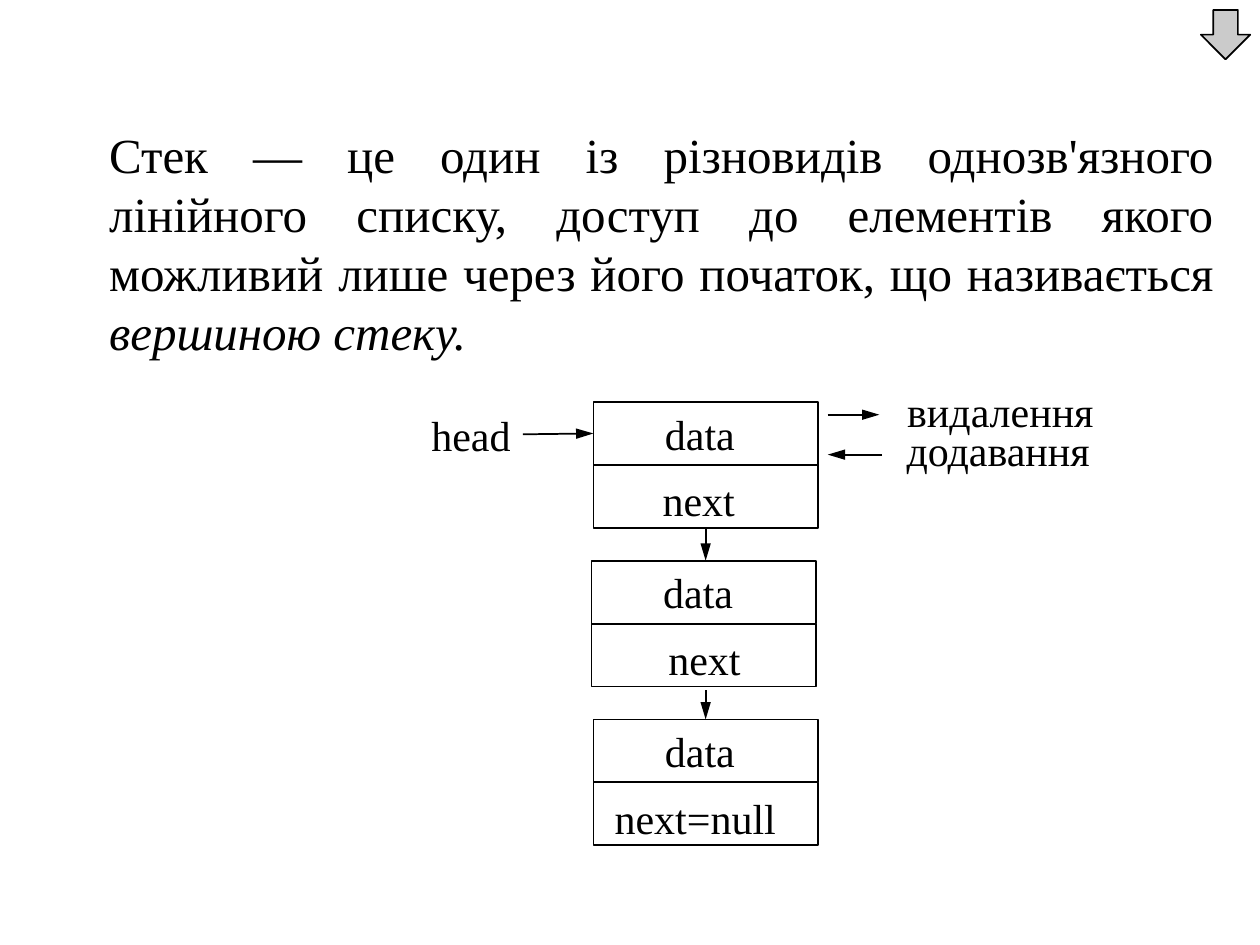
import pptx
import pptx.util
import pptx.dml.color
import pptx.enum.shapes
import pptx.enum.text
import pptx.oxml.ns
import lxml.etree

Pt = pptx.util.Pt
SHAPE = pptx.enum.shapes.MSO_SHAPE
ALIGN = pptx.enum.text.PP_ALIGN
INK = "000000"
FONT = "Times New Roman"
ROW = 36
STEP = 90.7


def color(code):
    return pptx.dml.color.RGBColor.from_string(code)


def apply(item, props):
    for name, value in props.items():
        setattr(item, name, value)


def add_sub(parent, tag, **attrs):
    return lxml.etree.SubElement(parent, pptx.oxml.ns.qn(tag), attrs)


def write(par, text, size, **props):
    run = par.add_run()
    run.text = text
    apply(run.font, {"name": FONT, "size": Pt(size), **props})
    run.font.color.rgb = color(INK)


def add_form(slide, kind, box, fill=None):
    form = slide.shapes.add_shape(kind, *map(Pt, box))
    form.shadow.inherit = False
    if fill:
        form.fill.solid()
        form.fill.fore_color.rgb = color(fill)
    else:
        form.fill.background()
    form.line.color.rgb = color(INK)
    form.line.width = Pt(1)


def add_label(slide, text, box, align=ALIGN.LEFT):
    frame = slide.shapes.add_textbox(*map(Pt, box)).text_frame
    apply(frame, {"word_wrap": False,
                  "auto_size": pptx.enum.text.MSO_AUTO_SIZE.SHAPE_TO_FIT_TEXT})
    frame.paragraphs[0].alignment = align
    write(frame.paragraphs[0], text, 24)


def add_arrow(slide, start, end):
    """Draw a line with its arrowhead at the end point."""
    line = slide.shapes.add_connector(
        pptx.enum.shapes.MSO_CONNECTOR.STRAIGHT, *map(Pt, (*start, *end)))
    line.line.color.rgb = color(INK)
    line.line.width = Pt(1)
    add_sub(line.line._get_or_add_ln(), "a:tailEnd",
            type="triangle", w="med", len="lg")
    add_sub(line._element.spPr, "a:effectLst")


def add_intro(slide, box):
    left, top, width, height = map(Pt, box)
    body = slide.placeholders[1]
    apply(body, {"left": left, "top": top, "width": width, "height": height})
    frame = body.text_frame
    apply(frame, {"margin_left": Pt(14.4), "margin_right": Pt(14.4),
                  "margin_top": Pt(3.6), "margin_bottom": Pt(3.6),
                  "word_wrap": True,
                  "auto_size": pptx.enum.text.MSO_AUTO_SIZE.NONE,
                  "vertical_anchor": pptx.enum.text.MSO_ANCHOR.TOP})
    par = frame.paragraphs[0]
    apply(par, {"alignment": ALIGN.JUSTIFY, "space_before": Pt(5.6)})
    props = par._p.get_or_add_pPr()
    props.set("marL", str(Pt(48)))
    props.set("indent", "0")
    add_sub(props, "a:buNone")
    write(par, "Стек — це один із різновидів однозв'язного лінійного списку, "
          "доступ до елементів якого можливий лише через його початок, "
          "що називається ", 28)
    write(par, "вершиною стеку.", 28, italic=True)


def add_node(slide, box, link, inset, span):
    """Draw a data cell above a link cell, whose text has its own inset."""
    left, top, width, height = box
    cells = (("data", 33.8, 0, 54.7), (link, inset, 2, span))
    for row, (text, dx, dy, wide) in enumerate(cells):
        y = top + row * height / 2
        add_form(slide, SHAPE.RECTANGLE, (left, y, width, height / 2))
        add_label(slide, text, (left + dx, y + dy, wide, ROW))


def add_chain(slide, box):
    left, top, width, height = box
    nodes = ((0, "next", 32.4, 56.2), (-1, "next", 36.7, 56.2),
             (0, "next=null", 5, 107.3))
    mid = left + width / 2
    for i, (shift, link, inset, span) in enumerate(nodes):
        y = top + i * STEP
        add_node(slide, (left + shift, y, width, height), link, inset, span)
        if i:
            add_arrow(slide, (mid, y - STEP + height + 2 * (i - 1)), (mid, y))
    add_label(slide, "head", (left - 100, top + 0.7, 59.8, ROW), ALIGN.RIGHT)
    add_arrow(slide, (left - 40.3, top + 18.5), (left, top + 18))


def add_moves(slide, box):
    """Draw the arrows and words for taking off and putting on."""
    left, top = box
    add_label(slide, "видалення", (left + 36.7, top, 122.4, ROW), ALIGN.RIGHT)
    add_label(slide, "додавання", (left + 36.7, top + 22.3, 120.2, ROW),
              ALIGN.RIGHT)
    add_arrow(slide, (left, top + 20.2), (left + 29.5, top + 20.2))
    add_arrow(slide, (left + 31, top + 43), (left, top + 43))


def main():
    deck = pptx.Presentation()
    apply(deck, {"slide_width": Pt(720), "slide_height": Pt(540)})
    slide = deck.slides.add_slide(deck.slide_layouts[1])
    title = slide.shapes.title._element
    title.getparent().remove(title)
    add_intro(slide, (0, 67.7, 707.8, 151.2))
    add_form(slide, SHAPE.DOWN_ARROW, (686.2, 5.7, 28.2, 28.2), "CBCBCB")
    add_chain(slide, (339.1, 229.7, 128.3, 2 * ROW))
    add_moves(slide, (473, 216.8))
    deck.save("out.pptx")


if __name__ == "__main__":
    main()
